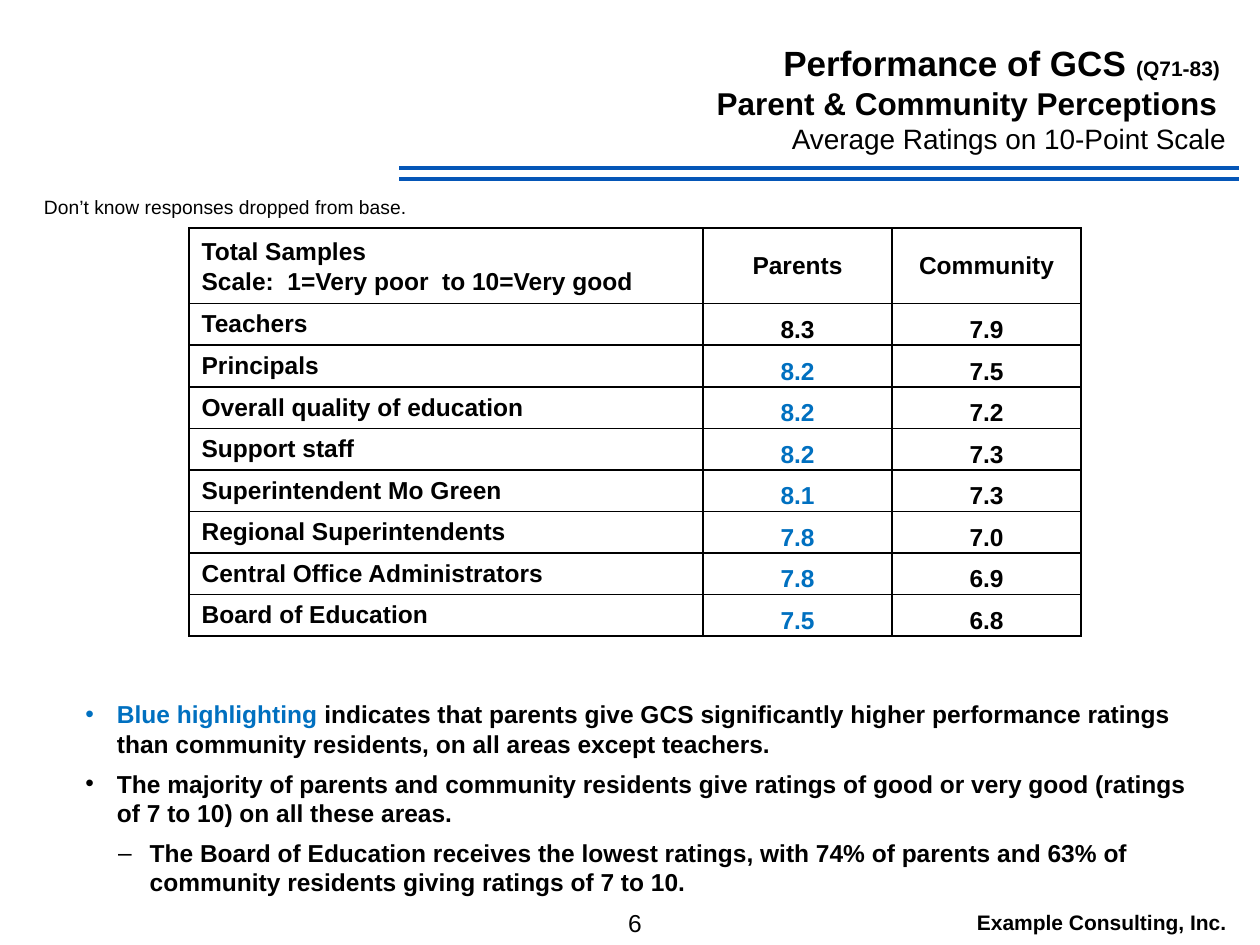
import pptx
import pptx.dml.color
import pptx.enum.shapes
import pptx.enum.text
import pptx.oxml
import pptx.oxml.ns
import pptx.util
from lxml import etree

Inches, Pt = pptx.util.Inches, pptx.util.Pt
RGBColor = pptx.dml.color.RGBColor
ALIGN, ANCHOR = pptx.enum.text.PP_ALIGN, pptx.enum.text.MSO_ANCHOR
qn = pptx.oxml.ns.qn

BLACK = RGBColor(0x00, 0x00, 0x00)
RULE_BLUE = RGBColor(0x05, 0x56, 0xB7)
HIGHLIGHT = RGBColor(0x00, 0x70, 0xC0)


def set_font(font, size, bold=False, color=BLACK):
    font.name = "Arial"
    font.size = Pt(size)
    font.bold = bold
    font.color.rgb = color


def add_text(page, text, left, top, width, height, size, bold=False, align=ALIGN.LEFT):
    box = page.shapes.add_textbox(Inches(left), Inches(top), Inches(width), Inches(height))
    box.text_frame.word_wrap = True
    para = box.text_frame.paragraphs[0]
    para.text = text
    para.alignment = align
    set_font(para.font, size, bold)


deck = pptx.Presentation()
deck.slide_width, deck.slide_height = Inches(10), Inches(7.5)
page = deck.slides.add_slide(deck.slide_layouts[5])

# Double rule under the title
for y in (1.33, 1.42):
    rule = page.shapes.add_connector(pptx.enum.shapes.MSO_CONNECTOR.STRAIGHT,
                                     Inches(3.17), Inches(y), Inches(9.83), Inches(y))
    rule.line.color.rgb = RULE_BLUE
    rule.line.width = Pt(2.25)
    etree.SubElement(rule._element.spPr, qn("a:effectLst"))

# Title: one paragraph with line breaks
title = page.shapes.title
title.left, title.top, title.width, title.height = Inches(2.75), Inches(0.25), Inches(7.08), Inches(1)
frame = title.text_frame
frame.word_wrap = True
frame.auto_size = pptx.enum.text.MSO_AUTO_SIZE.NONE
frame.vertical_anchor = ANCHOR.BOTTOM
frame.margin_bottom = Inches(0.02)
para = frame.paragraphs[0]
para.alignment = ALIGN.RIGHT
title_lines = [
    [("Performance of GCS ", 20, True), ("(Q71-83) ", 12, True)],
    [("Parent & Community Perceptions ", 18, True)],
    [("Average Ratings on 10-Point Scale", 16, False)],
]
for index, line in enumerate(title_lines):
    if index:
        para.add_line_break()
    for text, size, bold in line:
        span = para.add_run()
        span.text = text
        set_font(span.font, size, bold)

# Note and footer
add_text(page, "Don’t know responses dropped from base.", 0.25, 1.5, 4.08, 0.29, 11)
add_text(page, "6", 4.75, 7.16, 0.58, 0.33, 14, align=ALIGN.CENTER)
add_text(page, "Example Consulting, Inc.", 7.58, 7.17, 2.33, 0.3, 12, True, ALIGN.CENTER)

# Ratings table
ratings = [
    ("Total Samples\nScale:  1=Very poor  to 10=Very good", "Parents", "Community"),
    ("Teachers", "8.3", "7.9"),
    ("Principals", "8.2", "7.5"),
    ("Overall quality of education", "8.2", "7.2"),
    ("Support staff", "8.2", "7.3"),
    ("Superintendent Mo Green", "8.1", "7.3"),
    ("Regional Superintendents", "7.8", "7.0"),
    ("Central Office Administrators", "7.8", "6.9"),
    ("Board of Education", "7.5", "6.8"),
]
table = page.shapes.add_table(len(ratings), 3, Inches(1.5), Inches(1.81),
                              Inches(7.08), Inches(3.24)).table
for column, width in zip(table.columns, (4.08, 1.5, 1.5)):
    column.width = Inches(width)
for row_index, values in enumerate(ratings):
    table.rows[row_index].height = Inches(0.33 if row_index else 0.6)
    for col_index, value in enumerate(values):
        cell = table.cell(row_index, col_index)
        cell.text = value
        cell.vertical_anchor = ANCHOR.MIDDLE
        cell.margin_top = cell.margin_bottom = Inches(0.04)
        is_rating = row_index > 0 and col_index > 0
        if is_rating:
            cell.margin_left = cell.margin_right = cell.margin_top = cell.margin_bottom = 0
        # Blue marks parent ratings above community ratings, all but teachers
        color = HIGHLIGHT if row_index > 1 and col_index == 1 else BLACK
        for para in cell.text_frame.paragraphs:
            para.alignment = ALIGN.CENTER if col_index else ALIGN.LEFT
            if is_rating:
                para.line_spacing = 1.4
            elif row_index == 0 and col_index == 0:
                para.line_spacing = 1.1
            set_font(para.font, 14, True, color)
        for side in ("lnL", "lnR", "lnT", "lnB"):
            border = etree.SubElement(cell._tc.get_or_add_tcPr(), qn("a:" + side), w=str(Pt(1)))
            fill = etree.SubElement(border, qn("a:solidFill"))
            etree.SubElement(fill, qn("a:srgbClr"), val=str(BLACK))
        cell.fill.background()

# Findings
findings = [
    (0.25, "•", [("Blue highlighting ", HIGHLIGHT),
                 ("indicates that parents give GCS significantly higher performance ratings "
                  "than community residents, on all areas except teachers.", BLACK)]),
    (0.25, "•", [("The majority of parents and community residents give ratings of good or "
                  "very good (ratings of 7 to 10) on all these areas.", BLACK)]),
    (0.51, "‒", [("The Board of Education receives the lowest ratings, with 74% of parents and "
                  "63% of community residents giving ratings of 7 to 10.", BLACK)]),
]
box = page.shapes.add_textbox(Inches(0.58), Inches(5.5), Inches(9), Inches(1.68))
frame = box.text_frame
frame.word_wrap = True
for index, (indent, bullet, spans) in enumerate(findings):
    para = frame.add_paragraph() if index else frame.paragraphs[0]
    para.space_after = Pt(6)
    properties = para._p.get_or_add_pPr()
    properties.set("marL", str(Inches(indent)))
    properties.set("indent", str(Inches(-0.25)))
    etree.SubElement(properties, qn("a:buFont"), typeface="Arial")
    etree.SubElement(properties, qn("a:buChar"), char=bullet)
    for text, color in spans:
        span = para.add_run()
        span.text = text
        set_font(span.font, 14, True, color)

deck.save("out.pptx")
